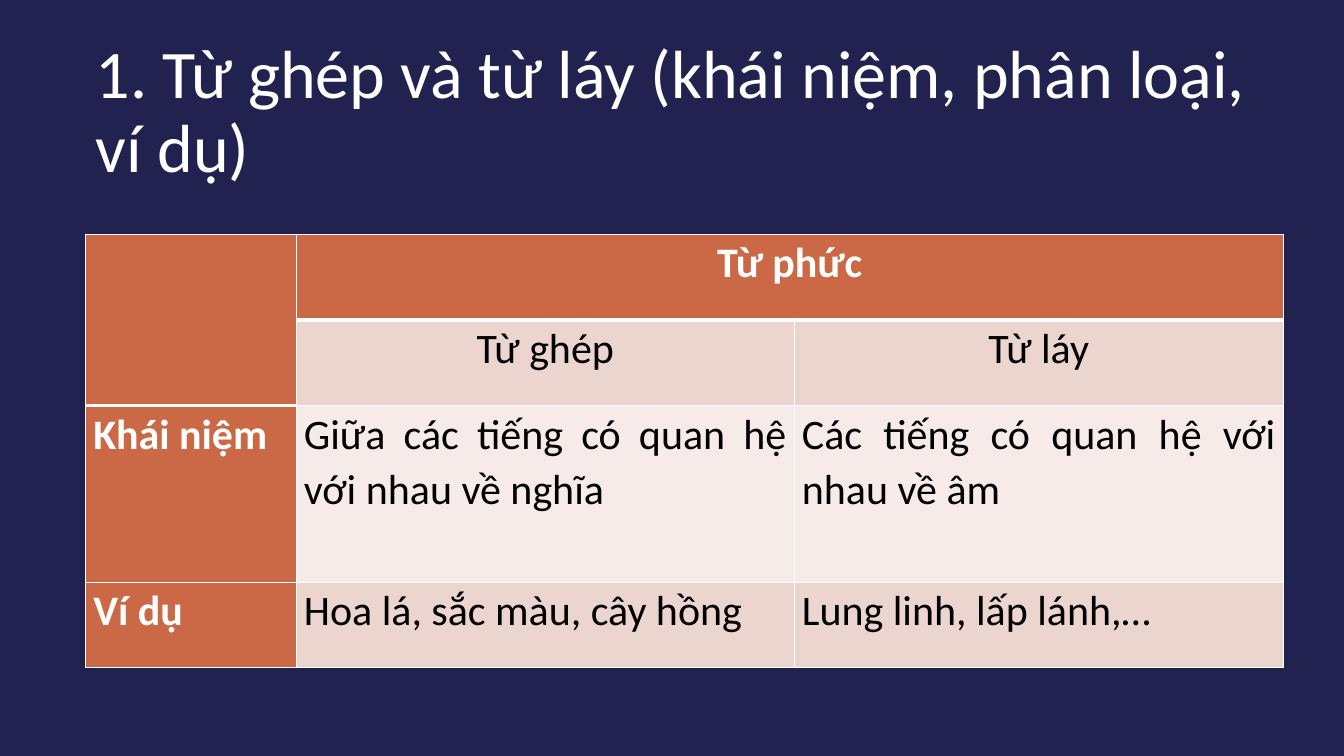
from lxml import etree
from pptx import Presentation
from pptx.dml.color import RGBColor
from pptx.enum.shapes import MSO_SHAPE
from pptx.enum.text import MSO_ANCHOR, MSO_AUTO_SIZE, PP_ALIGN
from pptx.oxml.ns import qn
from pptx.util import Cm, Pt

RECTANGLE = MSO_SHAPE.RECTANGLE
MIDDLE = MSO_ANCHOR.MIDDLE
NO_AUTOFIT = MSO_AUTO_SIZE.NONE
LEFT, CENTER, JUSTIFY = PP_ALIGN.LEFT, PP_ALIGN.CENTER, PP_ALIGN.JUSTIFY

# Content
TITLE = "1. Từ ghép và từ láy (khái niệm, phân loại, ví dụ)"
WORD_TYPES = [
    ["", "Từ phức", ""],
    ["", "Từ ghép", "Từ láy"],
    ["Khái niệm", "Giữa các tiếng có quan hệ với nhau về nghĩa ",
     "Các tiếng có quan hệ với nhau về âm"],
    ["Ví dụ", "Hoa lá, sắc màu, cây hồng", "Lung linh, lấp lánh,…"],
]
COLUMN_WIDTHS = [5.31, 12.55, 12.32]
ROW_HEIGHTS = [2.16, 2.16, 4.45, 2.16]
THICK_EDGES = {(0, 1), (0, 2), (1, 0)}  # cells above the heavy header rule

# Style
FONT = "Calibri"
NIGHT = RGBColor(0x17, 0x17, 0x35)
INDIGO = RGBColor(0x24, 0x24, 0x53)
RUST = RGBColor(0xCB, 0x68, 0x45)
ROSE = RGBColor(0xEC, 0xD4, 0xCF)
BLUSH = RGBColor(0xF6, 0xEB, 0xE9)
WHITE = RGBColor(0xFF, 0xFF, 0xFF)
BLACK = RGBColor(0, 0, 0)


def write(frame, text, size, color, align, spacing, bold=False):
    paragraph = frame.paragraphs[0]
    paragraph.alignment = align
    paragraph.line_spacing = spacing
    run = paragraph.add_run()
    run.text = text
    run.font.name = FONT
    run.font.size = Pt(size)
    run.font.bold = bold
    run.font.color.rgb = color
    return paragraph


def add_borders(cell, top, bottom):
    properties = cell._tc.get_or_add_tcPr()
    for side, points in (("L", 1), ("R", 1), ("T", top), ("B", bottom)):
        line = etree.SubElement(properties, qn(f"a:ln{side}"), w=str(Pt(points)))
        fill = etree.SubElement(line, qn("a:solidFill"))
        etree.SubElement(fill, qn("a:srgbClr"), val=str(WHITE))


prs = Presentation()
prs.slide_width, prs.slide_height = Cm(33.87), Cm(19.05)
slide = prs.slides.add_slide(prs.slide_layouts[5])

# Background with a translucent veil behind everything
background = slide.background.fill
background.solid()
background.fore_color.rgb = NIGHT
veil = slide.shapes.add_shape(RECTANGLE, 0, 0, prs.slide_width, prs.slide_height)
veil.shadow.inherit = False
veil.line.fill.background()
veil.fill.solid()
veil.fill.fore_color.rgb = INDIGO
veil_color = veil.fill._xPr.find(qn("a:solidFill"))[0]
etree.SubElement(veil_color, qn("a:alpha"), val="90000")
slide.shapes._spTree.insert(2, veil._element)

# Title
title = slide.shapes.title
title.left, title.top, title.width, title.height = Cm(2.16), Cm(1.02), Cm(29.54), Cm(3.68)
title.text_frame.word_wrap = True
title.text_frame.auto_size = NO_AUTOFIT
title.text_frame.vertical_anchor = MIDDLE
write(title.text_frame, TITLE, 48.6, WHITE, LEFT, 0.9)

# Table
table = slide.shapes.add_table(
    len(ROW_HEIGHTS), len(COLUMN_WIDTHS), Cm(2.16), Cm(5.9),
    Cm(sum(COLUMN_WIDTHS)), Cm(sum(ROW_HEIGHTS))).table
for column, width in zip(table.columns, COLUMN_WIDTHS):
    column.width = Cm(width)
for row, height in zip(table.rows, ROW_HEIGHTS):
    row.height = Cm(height)
table.cell(0, 0).merge(table.cell(1, 0))
table.cell(0, 1).merge(table.cell(0, 2))

for r, texts in enumerate(WORD_TYPES):
    for c, text in enumerate(texts):
        cell = table.cell(r, c)
        heading = r == 0 or c == 0
        cell.margin_left = cell.margin_right = Cm(0.19)
        cell.margin_top = cell.margin_bottom = 0
        # The merged corner takes its lower edge from its first cell
        thick_below = (r, c) in THICK_EDGES or (r, c) == (0, 0)
        add_borders(cell, 3 if (r - 1, c) in THICK_EDGES else 1,
                    3 if thick_below else 1)
        cell.fill.solid()
        cell.fill.fore_color.rgb = RUST if heading else (BLUSH if r == 2 else ROSE)
        if text:
            paragraph = write(cell.text_frame, text, 30, WHITE if heading else BLACK,
                              CENTER if r < 2 else JUSTIFY, 1.07, heading)
            paragraph.space_after = Pt(8)

prs.save("out.pptx")
